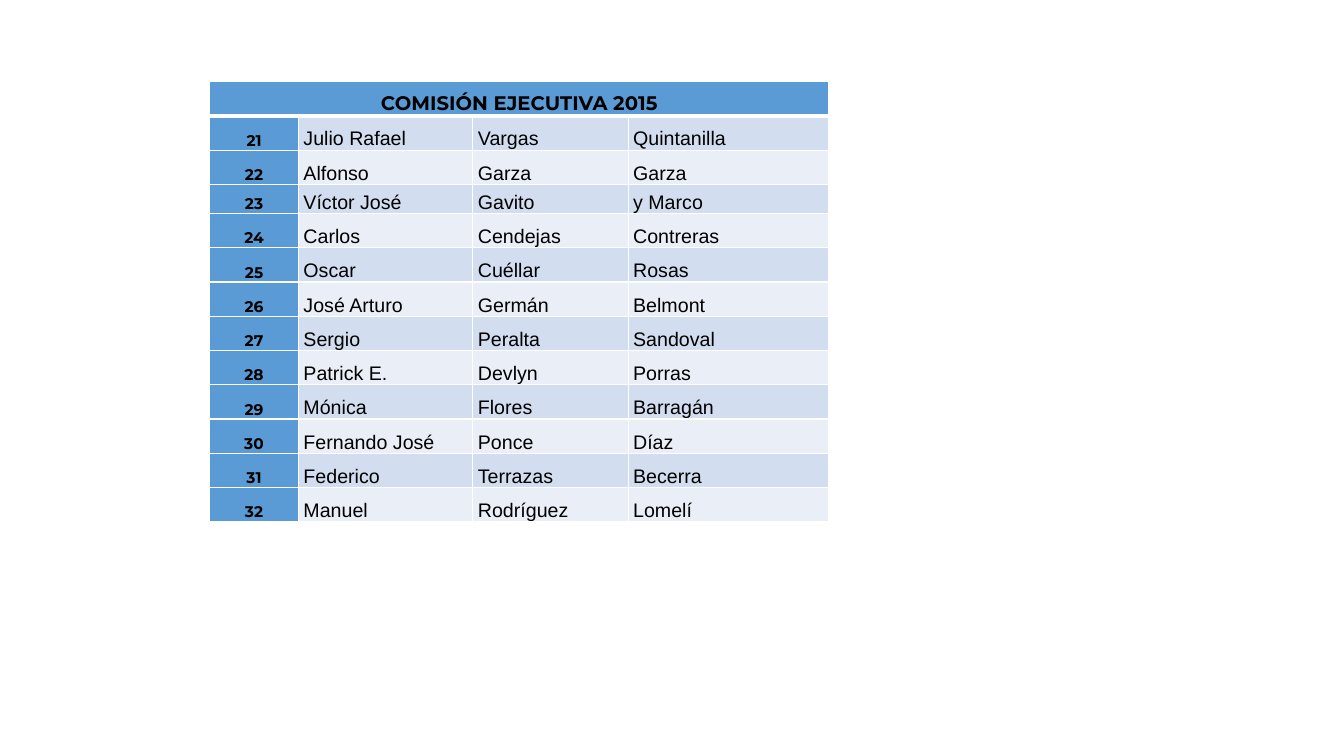
from lxml.etree import SubElement
from pptx import Presentation
from pptx.dml.color import RGBColor
from pptx.enum.text import MSO_ANCHOR as Anchor, PP_ALIGN as Align
from pptx.oxml.ns import qn
from pptx.util import Inches, Pt

BLUE = RGBColor(0x5B, 0x9B, 0xD5)
BAND_DARK = RGBColor(0xD2, 0xDE, 0xEF)
BAND_LIGHT = RGBColor(0xEA, 0xEF, 0xF7)
WHITE = RGBColor(0xFF, 0xFF, 0xFF)
BLACK = RGBColor(0x00, 0x00, 0x00)

TITLE = "COMISIÓN EJECUTIVA 2015"
FIRST_NUMBER = 21
MEMBERS = [
    ("Julio Rafael", "Vargas", "Quintanilla"),
    ("Alfonso", "Garza", "Garza"),
    ("Víctor José", "Gavito", "y Marco"),
    ("Carlos", "Cendejas", "Contreras"),
    ("Oscar", "Cuéllar", "Rosas"),
    ("José Arturo", "Germán", "Belmont"),
    ("Sergio", "Peralta", "Sandoval"),
    ("Patrick E.", "Devlyn", "Porras"),
    ("Mónica", "Flores", "Barragán"),
    ("Fernando José", "Ponce", "Díaz"),
    ("Federico", "Terrazas", "Becerra"),
    ("Manuel", "Rodríguez", "Lomelí"),
]
COLUMN_WIDTHS = [0.88, 1.73, 1.54, 1.99]
ROW_HEIGHT = 0.34
SHORT_ROW, SHORT_HEIGHT = 3, 0.29

CELL_FORMAT = {
    "vertical_anchor": Anchor.BOTTOM,
    "margin_left": Inches(0.05),
    "margin_right": Inches(0.05),
    "margin_top": 0,
    "margin_bottom": 0,
}
TITLE_FONT = {"name": "Montserrat", "size": Pt(14), "bold": True}
NUMBER_FONT = {"name": "Montserrat", "size": Pt(11), "bold": True}
NAME_FONT = {"name": "Arial", "size": Pt(14), "bold": False}


def set_attributes(target, values):
    for name, value in values.items():
        setattr(target, name, value)


def add_borders(cell, top, bottom):
    """Draw white borders; widths are in points."""
    properties = cell._tc.get_or_add_tcPr()
    for side, width in {"L": 1, "R": 1, "T": top, "B": bottom}.items():
        line = SubElement(properties, qn(f"a:ln{side}"), w=str(Pt(width)))
        fill = SubElement(line, qn("a:solidFill"))
        SubElement(fill, qn("a:srgbClr"), val=str(WHITE))


def style_cell(cell, row, fill):
    # Borders come before the fill in the cell properties
    add_borders(cell, top=3 if row == 1 else 1, bottom=3 if row == 0 else 1)
    cell.fill.solid()
    cell.fill.fore_color.rgb = fill
    set_attributes(cell, CELL_FORMAT)


def write_cell(cell, text, font, alignment):
    cell.text = text
    paragraph = cell.text_frame.paragraphs[0]
    set_attributes(paragraph, {"alignment": alignment, "line_spacing": 1.07})
    set_attributes(paragraph.font, font)
    paragraph.font.color.rgb = BLACK


def add_member_table(slide):
    row_count = len(MEMBERS) + 1
    heights = [ROW_HEIGHT] * row_count
    heights[SHORT_ROW] = SHORT_HEIGHT
    table = slide.shapes.add_table(
        row_count, len(COLUMN_WIDTHS), Inches(2.08), Inches(0.81),
        Inches(sum(COLUMN_WIDTHS)), Inches(sum(heights))).table
    for column, width in zip(table.columns, COLUMN_WIDTHS):
        column.width = Inches(width)
    for row, height in zip(table.rows, heights):
        row.height = Inches(height)

    # Title row across all columns
    for cell in table.rows[0].cells:
        style_cell(cell, 0, BLUE)
    title_cell = table.cell(0, 0)
    title_cell.merge(table.cell(0, len(COLUMN_WIDTHS) - 1))
    write_cell(title_cell, TITLE, TITLE_FONT, Align.CENTER)

    # Numbered members in alternating bands
    for row, names in enumerate(MEMBERS, start=1):
        number_cell = table.cell(row, 0)
        style_cell(number_cell, row, BLUE)
        write_cell(number_cell, str(FIRST_NUMBER + row - 1), NUMBER_FONT, Align.CENTER)
        band = BAND_DARK if row % 2 else BAND_LIGHT
        for column, name in enumerate(names, start=1):
            cell = table.cell(row, column)
            style_cell(cell, row, band)
            write_cell(cell, name, NAME_FONT, Align.LEFT)


def main():
    presentation = Presentation()
    presentation.slide_width = Inches(13.33)
    presentation.slide_height = Inches(7.5)
    slide = presentation.slides.add_slide(presentation.slide_layouts[6])
    add_member_table(slide)
    presentation.save("out.pptx")


if __name__ == "__main__":
    main()
